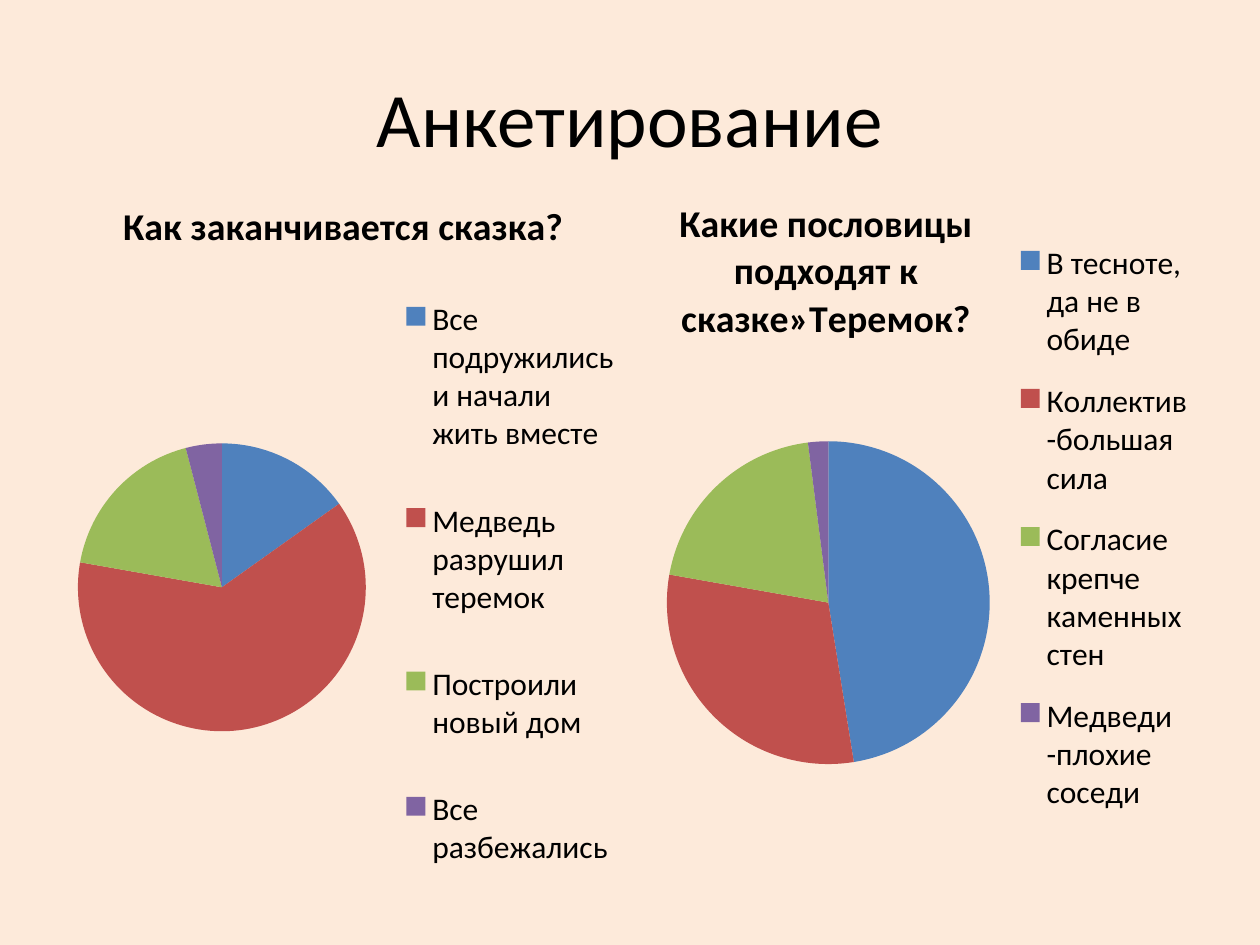
import pptx
import pptx.chart.data
import pptx.dml.color
import pptx.enum.chart
import pptx.enum.text
import pptx.oxml
import pptx.util
from pptx.util import Inches

FONT = "Calibri"
BLACK = "000000"
SLICES = ["4F81BD", "C0504D", "9BBB59", "8064A2"]
C_NS = "http://schemas.openxmlformats.org/drawingml/2006/chart"


def rgb(value):
    return pptx.dml.color.RGBColor.from_string(value)


def set_font(font, size, bold=False):
    font.name = FONT
    font.size = pptx.util.Pt(size)
    font.bold = bold
    font.color.rgb = rgb(BLACK)


def add_title(s, box, text):
    sp = s.shapes.add_textbox(*box)
    tf = sp.text_frame
    tf.word_wrap = True
    tf.vertical_anchor = pptx.enum.text.MSO_ANCHOR.MIDDLE
    p = tf.paragraphs[0]
    p.alignment = pptx.enum.text.PP_ALIGN.CENTER
    r = p.add_run()
    r.text = text
    set_font(r.font, 44)


def set_layout(element, before, place, target=""):
    for old in element.findall(f"{{{C_NS}}}layout"):
        element.remove(old)
    modes = '<c:xMode val="edge"/><c:yMode val="edge"/>'
    sizes = "".join(f'<c:{k} val="{v}"/>' for k, v in zip("xywh", place))
    layout = pptx.oxml.parse_xml(
        f'<c:layout xmlns:c="{C_NS}"><c:manualLayout>{target}{modes}{sizes}'
        "</c:manualLayout></c:layout>"
    )
    element.find(f"{{{C_NS}}}{before}").addprevious(layout)


def add_pie(s, box, title, answers, title_at, plot_at, legend_at):
    data = pptx.chart.data.CategoryChartData()
    data.categories = list(answers)
    data.add_series("Series 1", list(answers.values()))
    kind = pptx.enum.chart.XL_CHART_TYPE.PIE
    chart = s.shapes.add_chart(kind, *box, data).chart
    set_font(chart.font, 18)

    chart.has_title = True
    r = chart.chart_title.text_frame.paragraphs[0].add_run()
    r.text = title
    set_font(r.font, 21.6, True)
    set_layout(chart.chart_title._element, "overlay", title_at)

    chart.has_legend = True
    chart.legend.position = pptx.enum.chart.XL_LEGEND_POSITION.RIGHT
    chart.legend.include_in_layout = False
    set_font(chart.legend.font, 18)
    set_layout(chart.legend._element, "overlay", legend_at)

    plot = chart.plots[0]
    plot.vary_by_categories = True
    for i, color in enumerate(SLICES):
        fill = plot.series[0].points[i].format.fill
        fill.solid()
        fill.fore_color.rgb = rgb(color)
    set_layout(plot._element.getparent(), "pieChart", plot_at,
               '<c:layoutTarget val="inner"/>')


def main():
    prs = pptx.Presentation()
    prs.slide_width, prs.slide_height = Inches(10), Inches(7.5)
    s = prs.slides.add_slide(prs.slide_layouts[6])
    s.background.fill.solid()
    s.background.fill.fore_color.rgb = rgb("FDEADA")

    add_title(s, [Inches(v) for v in (0.5, 0.3, 9, 1.25)], "Анкетирование")
    add_pie(
        s, [Inches(v) for v in (0.47, 1.41, 4.53, 5.86)],
        "Как заканчивается сказка?",
        {"Все подружились и начали жить вместе": 15,
         "Медведь разрушил теремок": 62,
         "Построили новый дом": 18,
         "Все разбежались": 4},
        (0.1, 0.02), (0.03, 0.36, 0.51, 0.39), (0.6, 0.1, 0.38, 0.9),
    )
    add_pie(
        s, [Inches(v) for v in (5.16, 0.94, 4.42, 6.25)],
        "Какие пословицы подходят к сказке»Теремок?",
        {"В тесноте, да не в обиде": 47,
         "Коллектив -большая сила": 30,
         "Согласие крепче каменных стен": 20,
         "Медведи -плохие соседи": 2},
        (0.04, 0.09), (0.03, 0.41, 0.58, 0.41), (0.65, 0.13, 0.33, 0.78),
    )
    prs.save("out.pptx")


if __name__ == "__main__":
    main()
